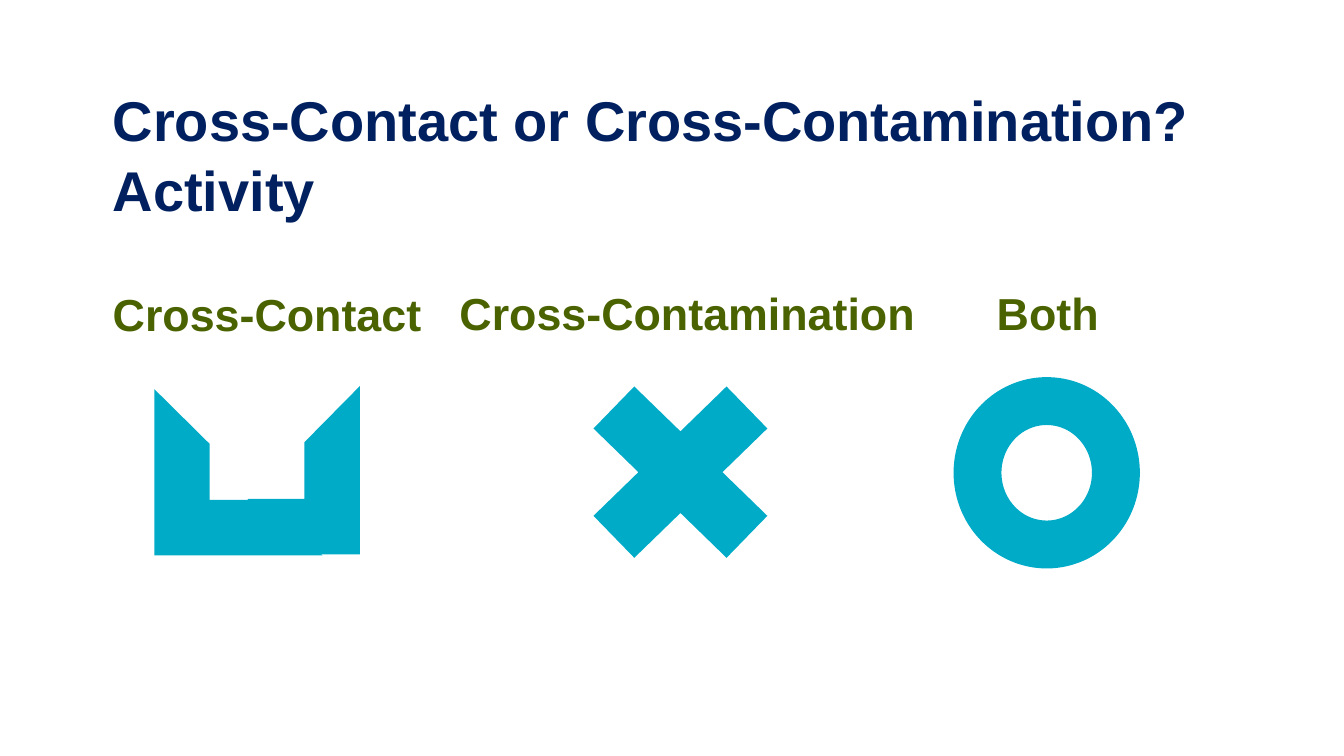
from pptx import Presentation
from pptx.dml.color import RGBColor
from pptx.enum.shapes import MSO_SHAPE as Preset
from pptx.enum.text import MSO_ANCHOR as Anchor, MSO_AUTO_SIZE as AutoSize, PP_ALIGN as Align
from pptx.util import Pt

NAVY = RGBColor(0x00, 0x20, 0x60)
OLIVE = RGBColor(0x4A, 0x63, 0x00)
TEAL = RGBColor(0x00, 0xAB, 0xC8)


class ActivitySlide:
    font_name = "Arial"

    def __init__(self, deck):
        self.page = deck.slides.add_slide(deck.slide_layouts[5])

    def set_text(self, box, text, size, color, anchor):
        frame = box.text_frame
        frame.text = text
        frame.word_wrap = True
        frame.auto_size = AutoSize.NONE
        frame.vertical_anchor = anchor
        para = frame.paragraphs[0]
        para.alignment = Align.LEFT
        font = para.runs[0].font
        font.name, font.size, font.bold = self.font_name, Pt(size), True
        font.color.rgb = color
        return para

    def title(self, text, left, top, width, height):
        box = self.page.shapes.title
        box.left, box.top, box.width, box.height = map(Pt, (left, top, width, height))
        para = self.set_text(box, text, 40, NAVY, Anchor.MIDDLE)
        para.line_spacing = 1.04

    def label(self, text, left, top, width, height=64.8):
        box = self.page.shapes.add_textbox(*map(Pt, (left, top, width, height)))
        self.set_text(box, text, 32, OLIVE, Anchor.BOTTOM)

    def symbol(self, preset, left, top, width, height, rotation=0, line_width=None):
        shape = self.page.shapes.add_shape(preset, *map(Pt, (left, top, width, height)))
        shape.shadow.inherit = False
        shape.rotation = rotation
        shape.fill.solid()
        shape.fill.fore_color.rgb = TEAL
        if line_width is None:
            shape.line.fill.background()
        else:
            shape.line.color.rgb = TEAL
            shape.line.width = Pt(line_width)


def main():
    deck = Presentation()
    deck.slide_width, deck.slide_height = Pt(960), Pt(540)
    slide = ActivitySlide(deck)

    slide.title("Cross-Contact or Cross-Contamination? Activity", 73.4, 56.9, 828, 104.4)

    slide.label("Cross-Contact", 73.4, 182.2, 406)
    slide.label("Cross-Contamination", 321.1, 181.4, 408.2)
    slide.label("Both", 704.9, 181.4, 196.6)

    slide.symbol(Preset.HALF_FRAME, 110.9, 277.2, 118.8, 120.2, rotation=270)
    slide.symbol(Preset.HALF_FRAME, 138.2, 275.8, 118.8, 120.2, rotation=180)
    slide.symbol(Preset.MATH_MULTIPLY, 394.6, 248.4, 182.9, 177.8)
    slide.symbol(Preset.DONUT, 681.8, 270, 131.8, 135.4, line_width=1.25)

    deck.save("out.pptx")


if __name__ == "__main__":
    main()
